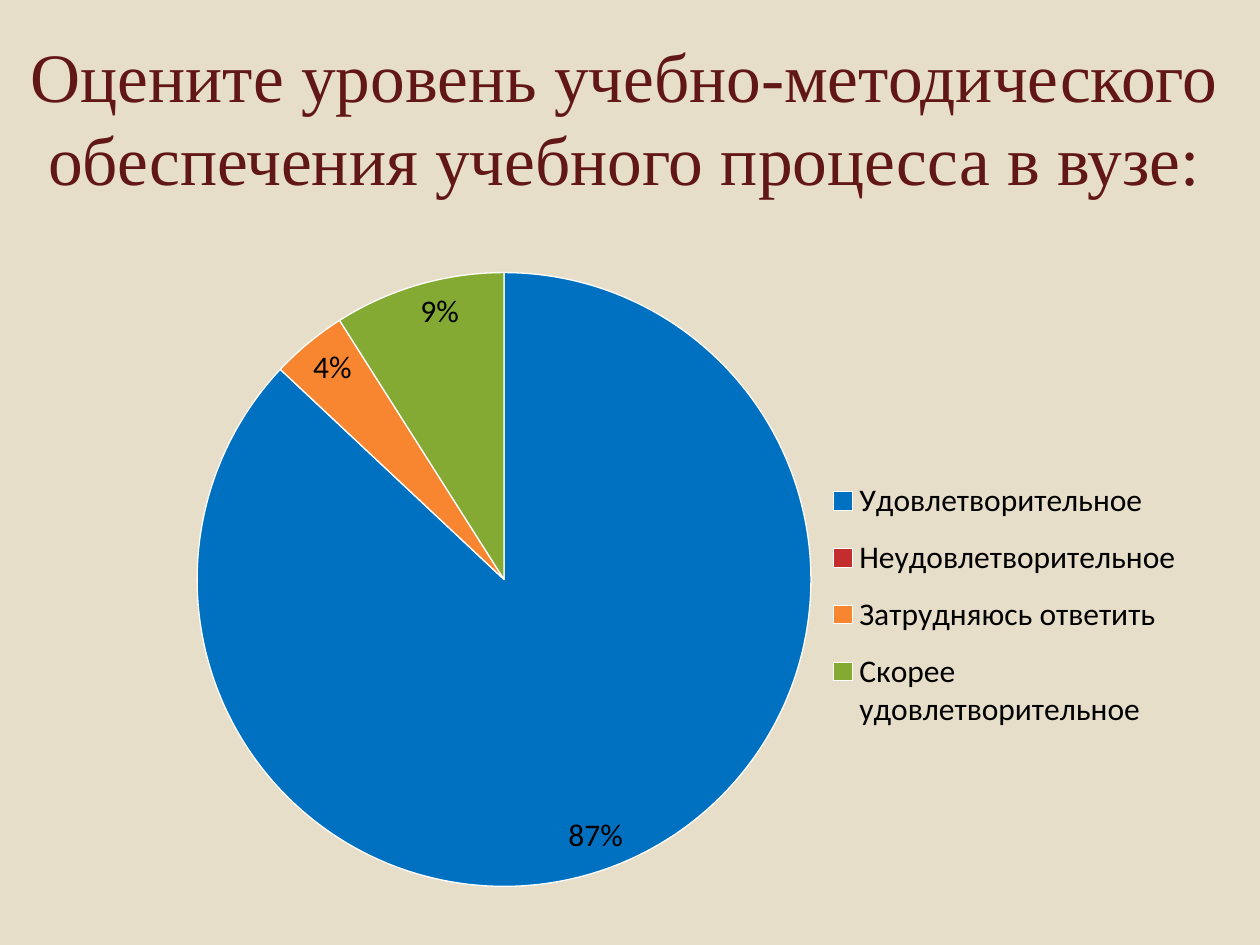
from lxml.etree import SubElement
from pptx import Presentation
from pptx.chart.data import CategoryChartData
from pptx.dml.color import RGBColor
from pptx.enum.chart import XL_CHART_TYPE, XL_LABEL_POSITION, XL_LEGEND_POSITION
from pptx.enum.text import MSO_ANCHOR, MSO_AUTO_SIZE, PP_ALIGN
from pptx.oxml.ns import qn
from pptx.util import Inches, Pt

SAND = RGBColor(0xE7, 0xDE, 0xC9)
WINE = RGBColor(0x62, 0x17, 0x17)
BLACK = RGBColor(0, 0, 0)
WHITE = RGBColor(0xFF, 0xFF, 0xFF)
BLUE = RGBColor(0x00, 0x70, 0xC0)
RED = RGBColor(0xC3, 0x2D, 0x2E)
ORANGE = RGBColor(0xF8, 0x86, 0x31)
GREEN = RGBColor(0x84, 0xAA, 0x33)


def write(frame, text, size, font, color, align):
    frame.text = text
    para = frame.paragraphs[0]
    para.alignment = align
    para.font.size = Pt(size)
    para.font.name = font
    para.font.color.rgb = color


def place(owner, **box):
    for old in owner.findall(qn("c:layout")):
        owner.remove(old)
    layout = SubElement(owner, qn("c:layout"))
    manual = SubElement(layout, qn("c:manualLayout"))
    for tag, value in box.items():
        SubElement(manual, qn(f"c:{tag}")).set("val", str(value))
    return layout


deck = Presentation()
deck.slide_width, deck.slide_height = Inches(10), Inches(7.5)
slide = deck.slides.add_slide(deck.slide_layouts[5])
slide.background.fill.solid()
slide.background.fill.fore_color.rgb = SAND

title = slide.shapes.title
title.left, title.top = Inches(0), Inches(0.3)
title.width, title.height = Inches(9.91), Inches(1.25)
frame = title.text_frame
frame.word_wrap = True
frame.auto_size = MSO_AUTO_SIZE.NONE
frame.vertical_anchor = MSO_ANCHOR.MIDDLE
write(frame, "Оцените уровень учебно-методического обеспечения учебного процесса в вузе:",
      size=39.6, font="Times New Roman", color=WINE, align=PP_ALIGN.CENTER)

answers = [
    ("Удовлетворительное", 87, BLUE),
    ("Неудовлетворительное", 0, RED),
    ("Затрудняюсь ответить", 4, ORANGE),
    ("Скорее удовлетворительное", 9, GREEN),
]
data = CategoryChartData()
data.categories = [name for name, share, color in answers]
data.add_series("Series 1", [share for name, share, color in answers])
chart = slide.shapes.add_chart(XL_CHART_TYPE.PIE, Inches(1.38), Inches(1.7),
                               Inches(8.19), Inches(5.8), data).chart
chart.has_title = False
chart.font.name = "Calibri"
chart.font.size = Pt(18)
chart.font.color.rgb = BLACK

plot = chart.plots[0]
plot.vary_by_categories = True
for index, (name, share, color) in enumerate(answers):
    style = plot.series[0].points[index].format
    style.fill.solid()
    style.fill.fore_color.rgb = color
    style.line.color.rgb = WHITE
    style.line.width = Pt(0.75)

plot.has_data_labels = True
labels = plot.data_labels
labels.show_percentage = True
labels.show_value = False
labels.number_format = "0%;;"
labels.number_format_is_linked = False
labels.position = XL_LABEL_POSITION.INSIDE_END

chart.has_legend = True
legend = chart.legend
legend.position = XL_LEGEND_POSITION.RIGHT
legend.include_in_layout = False
area = chart.element.find(".//" + qn("c:plotArea"))
area.insert(0, place(area, layoutTarget="inner", xMode="edge", yMode="edge",
                     x=0.02, y=0.08, w=0.6, h=0.84))
key = chart.element.find(".//" + qn("c:legend"))
key.insert(1, place(key, xMode="edge", yMode="edge", x=0.62, y=0.34, w=0.37, h=0.39))

deck.save("out.pptx")
